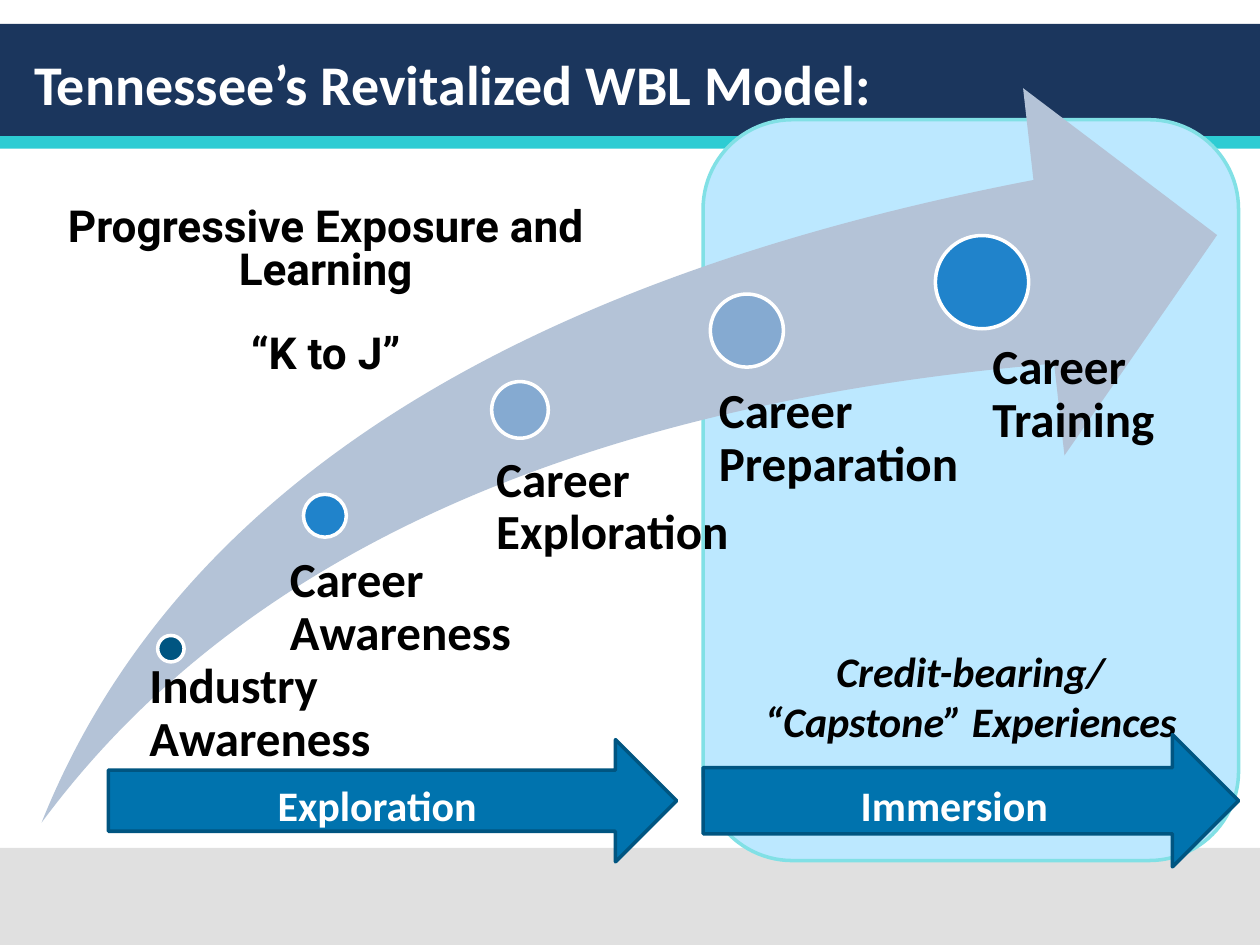
from lxml import etree
from pptx import Presentation
from pptx.dml.color import RGBColor
from pptx.enum.shapes import MSO_SHAPE
from pptx.enum.text import MSO_ANCHOR, PP_ALIGN
from pptx.util import Inches, Pt

RECT, ROUNDED, OVAL = MSO_SHAPE.RECTANGLE, MSO_SHAPE.ROUNDED_RECTANGLE, MSO_SHAPE.OVAL
SWOOSH, ARROW = MSO_SHAPE.SWOOSH_ARROW, MSO_SHAPE.RIGHT_ARROW
TOP, MIDDLE, BOTTOM = MSO_ANCHOR.TOP, MSO_ANCHOR.MIDDLE, MSO_ANCHOR.BOTTOM
LEFT, CENTER = PP_ALIGN.LEFT, PP_ALIGN.CENTER

W, H = 10, 7.5
COLORS = {
    "navy": "1B365D", "teal": "2DCCD3", "grey": "E0E0E0", "panel": "BCE8FF",
    "panel_line": "81E0E5", "swoosh": "B4C3D7", "deep": "005581", "bright": "2083CB",
    "soft": "85AAD1", "arrow": "0073AE", "white": "FFFFFF", "black": "000000",
}

# dot centre (x, y) and diameter, dot colour, label box, label left inset, label;
# positions and sizes are shares of the swoosh box, diameters of its width
MILESTONES = [
    ((0.11, 0.763), 0.0225, "deep", (0.08, 0.78, 0.207, 0.19), 0.11, "Industry Awareness"),
    ((0.241, 0.582), 0.0365, "bright", (0.192, 0.636, 0.239, 0.214), 0.18, "Career Awareness"),
    ((0.407, 0.438), 0.0482, "soft", (0.361, 0.499, 0.286, 0.19), 0.24, "Career Exploration"),
    ((0.6, 0.33), 0.0622, "soft", (0.543, 0.406, 0.272, 0.243), 0.31, "Career Preparation"),
    ((0.8, 0.264), 0.0793, "bright", (0.767, 0.346, 0.181, 0.214), 0.39, "Career Training"),
]


def rgb(name):
    return RGBColor.from_string(COLORS[name])


def within(box, share):
    """Turn shares of a box into inches on the slide."""
    x, y, w, h = box
    return x + share[0] * w, y + share[1] * h, share[2] * w, share[3] * h


def add_shape(s, kind, box, fill, line=None):
    sp = s.shapes.add_shape(kind, *map(Inches, box))
    sp.shadow.inherit = False
    sp.fill.solid()
    sp.fill.fore_color.rgb = rgb(fill)
    if line:
        sp.line.color.rgb = rgb(line)
        sp.line.width = Pt(2)
    else:
        sp.line.fill.background()
    return sp


def write(p, text, size, color="black", font="Calibri", italic=False, align=LEFT):
    p.alignment = align
    r = p.add_run()
    r.text = text
    r.font.size, r.font.name = Pt(size), font
    r.font.bold, r.font.italic = True, italic
    r.font.color.rgb = rgb(color)


def add_text_box(s, box, anchor):
    tf = s.shapes.add_textbox(*map(Inches, box)).text_frame
    tf.word_wrap = True
    tf.vertical_anchor = anchor
    return tf


def background_bands(s):
    for top, height, color in [(0.19, 0.89, "navy"), (1.08, 0.1, "teal"), (6.73, 0.77, "grey")]:
        add_shape(s, RECT, (0, top, W, height), color)


def title(s, box, text):
    sp = s.shapes.title
    s.shapes._spTree.append(sp._element)  # in front of the bands
    sp.left, sp.top, sp.width, sp.height = map(Inches, box)
    sp.text_frame.vertical_anchor = MIDDLE
    write(sp.text_frame.paragraphs[0], text, 32, "white")


def immersion_panel(s, box, text):
    tf = add_shape(s, ROUNDED, box, "panel", "panel_line").text_frame
    tf.word_wrap = True
    tf.vertical_anchor = BOTTOM
    tf.margin_bottom = Inches(0.7)
    write(tf.paragraphs[0], text, 24, italic=True, align=CENTER)


def career_path(s, box):
    sp = add_shape(s, SWOOSH, box, "swoosh")
    sp.adjustments[0] = sp.adjustments[1] = 0.25
    for (cx, cy), share, color, label_share, inset, label in MILESTONES:
        d = share * box[2]
        x, y, _, _ = within(box, (cx, cy, 0, 0))
        add_shape(s, OVAL, (x - d / 2, y - d / 2, d, d), color, "white")
        tf = add_text_box(s, within(box, label_share), TOP)
        tf.margin_left = Inches(inset)
        tf.margin_top = tf.margin_right = tf.margin_bottom = 0
        p = tf.paragraphs[0]
        p.line_spacing = 0.9
        write(p, label, 28)


def tagline(s, box, lines):
    tf = add_text_box(s, box, MIDDLE)
    for i, line in enumerate(lines):
        p = tf.add_paragraph() if i else tf.paragraphs[0]
        p.line_spacing = 0.8
        if i:
            p.space_before = Pt(24)
        write(p, line, 25.2, font="Roboto", align=CENTER)


def phase_arrow(s, box, text):
    tf = add_shape(s, ARROW, box, "arrow", "deep").text_frame
    tf.vertical_anchor = MIDDLE
    p = tf.paragraphs[0]
    p.line_spacing, p.space_after = 1.15, Pt(10)
    write(p, text, 24, "white", align=CENTER)


def main():
    prs = Presentation()
    prs.slide_width, prs.slide_height = Inches(W), Inches(H)
    s = prs.slides.add_slide(prs.slide_layouts[5])
    background_bands(s)
    title(s, (0.17, 0.25, 9.67, 0.82), "Tennessee’s Revitalized WBL Model:")
    immersion_panel(s, (5.58, 0.95, 4.25, 5.88), "Credit-bearing/ “Capstone” Experiences")
    career_path(s, (0.33, 0.7, 9.33, 5.83))
    tagline(s, (0, 1.54, 5.17, 1.58), ["Progressive Exposure and Learning", "“K to J”"])
    phase_arrow(s, (0.86, 5.87, 4.51, 0.97), "Exploration")
    phase_arrow(s, (5.58, 5.83, 4.25, 1.05), "Immersion")
    prs.save("out.pptx")


if __name__ == "__main__":
    main()
